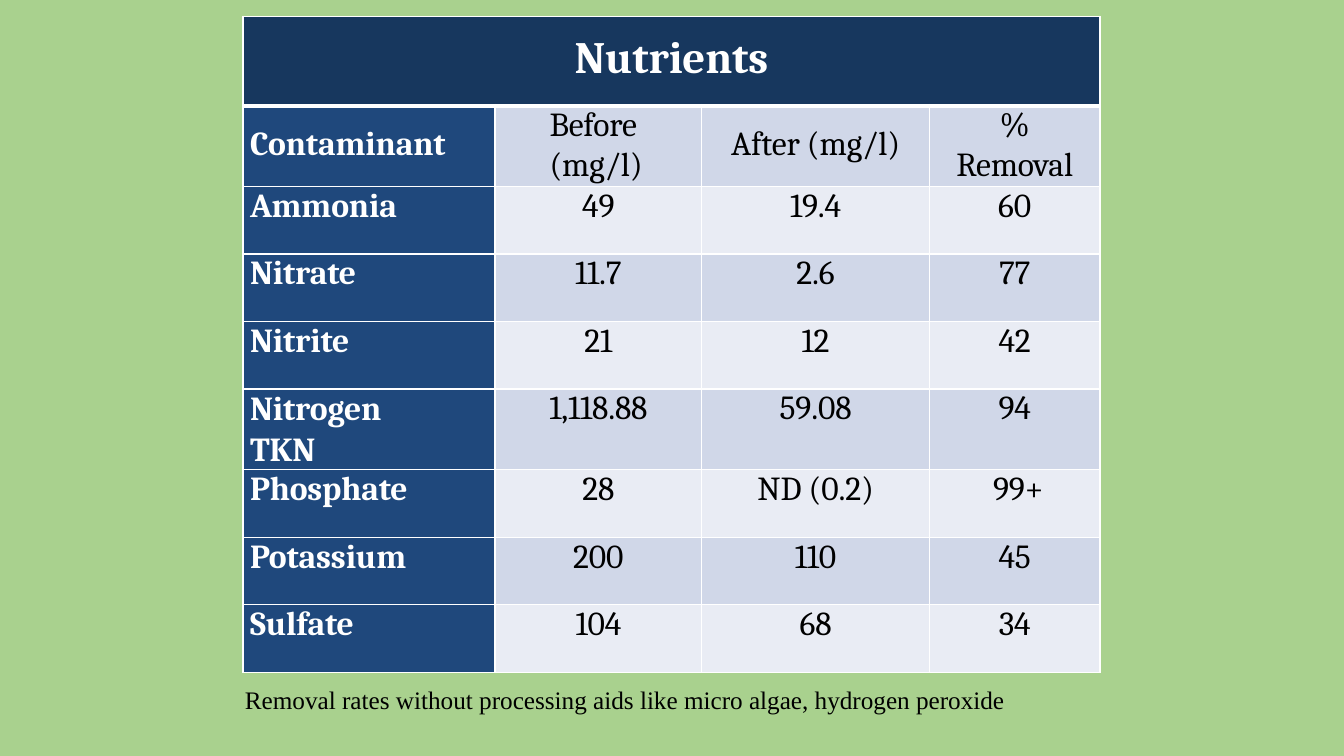
from dataclasses import dataclass
from typing import Optional

from lxml import etree
from pptx import Presentation
from pptx.dml.color import RGBColor
from pptx.enum.text import MSO_AUTO_SIZE, PP_ALIGN
from pptx.oxml.ns import qn
from pptx.util import Inches, Pt

LEFT, CENTER = PP_ALIGN.LEFT, PP_ALIGN.CENTER
GROW = MSO_AUTO_SIZE.SHAPE_TO_FIT_TEXT

COLORS = {
    "background": "A9D18E",
    "title": "17375E",
    "label": "1F487C",
    "dark_band": "D0D7E8",
    "light_band": "E9ECF4",
    "white": "FFFFFF",
    "black": "000000",
}
COL_WIDTHS = (2.5, 2.05, 2.26, 1.69)
ROW_HEIGHTS = (0.89, 0.8, 0.67, 0.67, 0.67, 0.8, 0.67, 0.67, 0.67)
LABEL_INDENT = 0.07


@dataclass
class Entry:
    text: str
    indent: Optional[float] = None  # centred when there is no indent
    top: float = 0
    right: float = 0
    before: float = 0
    spacings: tuple[Optional[float], ...] = (28.1,)


def label(text: str, **kwargs) -> Entry:
    return Entry(text, indent=LABEL_INDENT, **kwargs)


HEADER_DROP = {"top": 0.19, "before": 13.7, "spacings": (None,)}
TITLE = Entry("Nutrients", top=0.17, before=11.9, spacings=(None,))
ROWS = [
    [label("Contaminant", **HEADER_DROP),
     Entry("Before\n(mg/l)", indent=0.54, spacings=(28.1, 28.5)),
     Entry("After (mg/l)", **HEADER_DROP),
     Entry("%\nRemoval", spacings=(28.1, 28.5))],
    [label("Ammonia"), Entry("49"), Entry("19.4"), Entry("60")],
    [label("Nitrate"), Entry("11.7"), Entry("2.6"), Entry("77")],
    [label("Nitrite"), Entry("21"), Entry("12"), Entry("42")],
    [label("Nitrogen TKN", right=0.6, spacings=(28.8,)),
     Entry("1,118.88"), Entry("59.08"), Entry("94")],
    [label("Phosphate"), Entry("28"), Entry("ND (0.2)"), Entry("99+", indent=0.63)],
    [label("Potassium"), Entry("200"), Entry("110"), Entry("45")],
    [label("Sulfate"), Entry("104"), Entry("68"), Entry("34")],
]


def rgb(name: str) -> RGBColor:
    return RGBColor.from_string(COLORS[name])


def write(tf, text: str, *, size=24, font="Cambria", color="black", bold=False,
          indent=None, before=0, spacings=(None,), tracking=-0.1) -> None:
    """Fill a text frame, one paragraph a line; spacings holds each line height."""
    for i, (line, spacing) in enumerate(zip(text.split("\n"), spacings)):
        p = tf.paragraphs[0] if i == 0 else tf.add_paragraph()
        p.alignment = CENTER if indent is None else LEFT
        if indent is not None:
            pPr = p._p.get_or_add_pPr()
            pPr.set("marL", str(Inches(indent)))
            pPr.set("indent", "0")
        if before:
            p.space_before = Pt(before)
        if spacing:
            p.line_spacing = Pt(spacing)
        r = p.add_run()
        r.text = line
        r.font.size, r.font.name, r.font.bold = Pt(size), font, bold
        r.font.color.rgb = rgb(color)
        r._r.get_or_add_rPr().set("spc", str(round(tracking * 100)))


def set_borders(cell, top: float = 1, bottom: float = 1) -> None:
    """Draw white cell borders; widths are in points."""
    tcPr = cell._tc.get_or_add_tcPr()
    widths = {"a:lnL": 1, "a:lnR": 1, "a:lnT": top, "a:lnB": bottom}
    for i, (tag, width) in enumerate(widths.items()):
        ln = etree.Element(qn(tag), w=str(Pt(width)))
        fill = etree.SubElement(ln, qn("a:solidFill"))
        etree.SubElement(fill, qn("a:srgbClr"), val=COLORS["white"])
        tcPr.insert(i, ln)


def fill_cell(cell, entry: Entry, fill: str, **text_format) -> None:
    cell.margin_left = cell.margin_bottom = 0
    cell.margin_top, cell.margin_right = Inches(entry.top), Inches(entry.right)
    cell.fill.solid()
    cell.fill.fore_color.rgb = rgb(fill)
    write(cell.text_frame, entry.text, indent=entry.indent, before=entry.before,
          spacings=entry.spacings, **text_format)


def add_nutrient_table(s) -> None:
    frame = s.shapes.add_table(
        len(ROW_HEIGHTS), len(COL_WIDTHS), Inches(2.41), Inches(0.16),
        Inches(sum(COL_WIDTHS)), Inches(sum(ROW_HEIGHTS)))
    table = frame.table
    table.first_row = table.horz_banding = False
    for column, width in zip(table.columns, COL_WIDTHS):
        column.width = Inches(width)
    for row, height in zip(table.rows, ROW_HEIGHTS):
        row.height = Inches(height)

    title = table.cell(0, 0)
    title.merge(table.cell(0, len(COL_WIDTHS) - 1))
    fill_cell(title, TITLE, "title", size=32, color="white", bold=True)
    for i, entries in enumerate(ROWS, start=1):
        band = "dark_band" if i % 2 else "light_band"
        for j, entry in enumerate(entries):
            is_label = j == 0
            fill_cell(table.cell(i, j), entry, "label" if is_label else band,
                      color="white" if is_label else "black", bold=is_label)
    for i, row in enumerate(table.rows):
        for cell in row.cells:
            set_borders(cell, top=3 if i == 1 else 1, bottom=3 if i == 0 else 1)


def add_caption(s) -> None:
    box = s.shapes.add_textbox(Inches(2.42), Inches(6.78), Inches(7.57), Inches(0.33))
    tf = box.text_frame
    tf.word_wrap = True
    tf.auto_size = GROW
    tf.margin_left = tf.margin_right = tf.margin_bottom = 0
    tf.margin_top = Inches(0.01)
    write(tf, "Removal rates without processing aids like micro algae, hydrogen peroxide",
          size=18, font="Times New Roman", indent=0.01, before=1, tracking=0)


def main() -> None:
    prs = Presentation()
    prs.slide_width, prs.slide_height = Inches(13.33), Inches(7.5)
    s = prs.slides.add_slide(prs.slide_layouts[6])
    s.background.fill.solid()
    s.background.fill.fore_color.rgb = rgb("background")
    add_nutrient_table(s)
    add_caption(s)
    prs.save("out.pptx")


if __name__ == "__main__":
    main()
